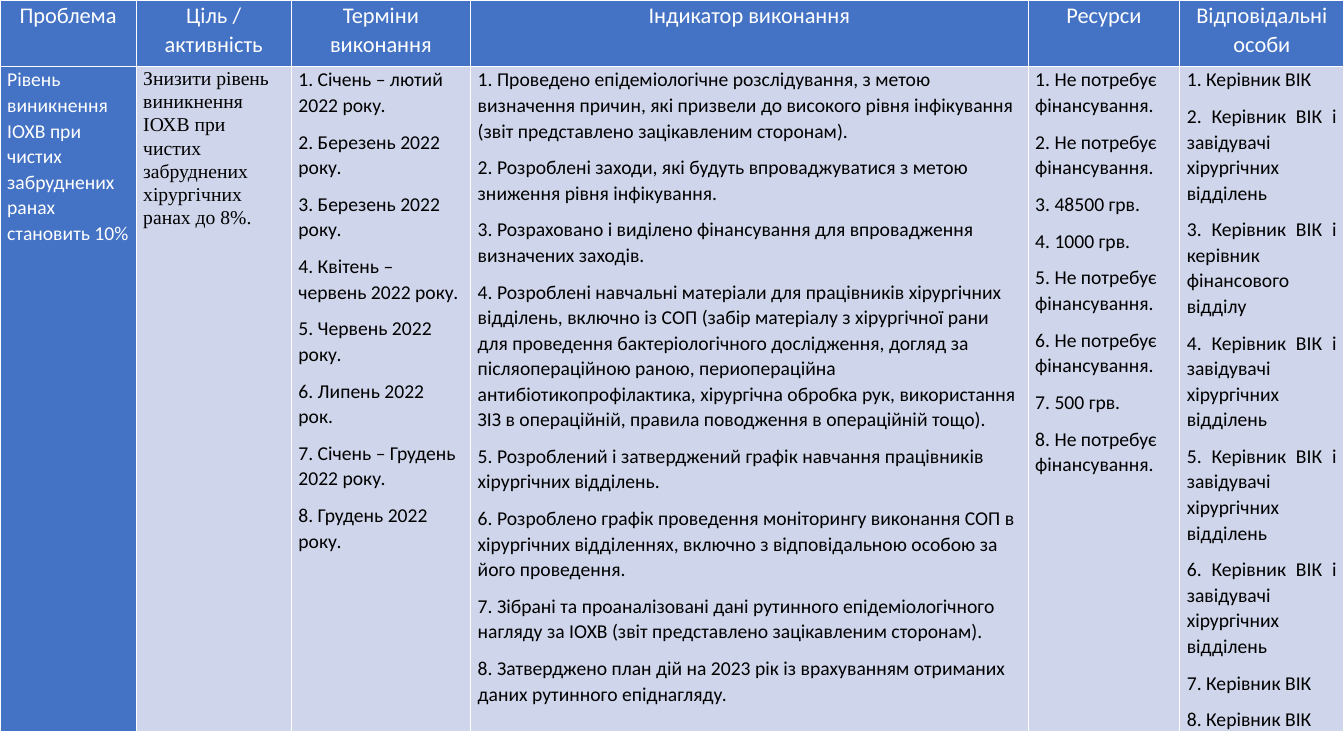
from lxml import etree
from pptx import Presentation
from pptx.dml.color import RGBColor
from pptx.enum.text import PP_ALIGN
from pptx.oxml.ns import qn
from pptx.util import Cm, Pt

LEFT, MID, FULL = PP_ALIGN.LEFT, PP_ALIGN.CENTER, PP_ALIGN.JUSTIFY
BLUE = RGBColor(0x44, 0x72, 0xC4)
PALE = RGBColor(0xCF, 0xD5, 0xEA)
WHITE = RGBColor(0xFF, 0xFF, 0xFF)
BLACK = RGBColor(0, 0, 0)
SANS, SERIF = "Calibri", "Times New Roman"

WIDTHS = [3.43, 3.91, 4.52, 14.05, 3.82, 4.14]
HEIGHTS = [1.68, 16.48]
HEADS = ["Проблема", "Ціль / активність", "Терміни виконання",
         "Індикатор виконання", "Ресурси", "Відповідальні особи"]
ISSUE = "Рівень виникнення ІОХВ при чистих забруднених ранах становить 10%"
GOAL = ("Знизити рівень виникнення ІОХВ при чистих забруднених "
        "хірургічних ранах до 8%.")
DATES = ["Січень – лютий 2022 року.", "Березень 2022 року.",
         "Березень 2022 року.", "Квітень – червень 2022 року.",
         "Червень 2022 року.", "Липень 2022 рок.",
         "Січень – Грудень 2022 року.", "Грудень 2022 року."]
SIGNS = [
    "Проведено епідеміологічне розслідування, з метою визначення причин, "
    "які призвели до високого рівня інфікування (звіт представлено "
    "зацікавленим сторонам).",
    "Розроблені заходи, які будуть впроваджуватися з метою зниження рівня "
    "інфікування.",
    "Розраховано і виділено фінансування для впровадження визначених заходів.",
    "Розроблені навчальні матеріали для працівників хірургічних відділень, "
    "включно із СОП (забір матеріалу з хірургічної рани для проведення "
    "бактеріологічного дослідження, догляд за післяопераційною раною, "
    "периопераційна антибіотикопрофілактика, хірургічна обробка рук, "
    "використання ЗІЗ в операційній, правила поводження в операційній тощо).",
    "Розроблений і затверджений графік навчання працівників хірургічних "
    "відділень.",
    "Розроблено графік проведення моніторингу виконання СОП в хірургічних "
    "відділеннях, включно з відповідальною особою за його проведення.",
    "Зібрані та проаналізовані дані рутинного епідеміологічного нагляду за "
    "ІОХВ (звіт представлено зацікавленим сторонам).",
    "Затверджено план дій на 2023 рік із врахуванням отриманих даних "
    "рутинного епіднагляду.",
]
FREE = "Не потребує фінансування."
COSTS = [FREE, FREE, "48500 грв.", "1000 грв.", FREE, FREE, "500 грв.", FREE]
CHIEF = "Керівник ВІК"
WARDS = f"{CHIEF} і завідувачі хірургічних відділень"
MONEY = f"{CHIEF} і керівник фінансового відділу"
STAFF = [CHIEF, WARDS, MONEY, WARDS, WARDS, WARDS, CHIEF, CHIEF]


def number(items):
    return [f"{n}. {item}" for n, item in enumerate(items, 1)]


def edge(cell):
    """Draw a thin white border on all four sides; call before the fill."""
    props = cell._tc.get_or_add_tcPr()
    for side in ("a:lnL", "a:lnR", "a:lnT", "a:lnB"):
        line = etree.SubElement(props, qn(side), w=str(Pt(1)))
        fill = etree.SubElement(line, qn("a:solidFill"))
        etree.SubElement(fill, qn("a:srgbClr"), val=str(WHITE))


def fill_cell(cell, lines, back, ink, size=14, face=SANS, align=LEFT):
    edge(cell)
    cell.fill.solid()
    cell.fill.fore_color.rgb = back
    cell.margin_left = cell.margin_right = Cm(0.18)
    cell.margin_top = cell.margin_bottom = 0
    cell.text = "\n".join(lines)
    for para in cell.text_frame.paragraphs:
        para.alignment = align
        para.line_spacing = 1.07
        para.space_after = Pt(8)
        font = para.font
        font.name, font.size, font.bold = face, Pt(size), False
        font.color.rgb = ink


def add_plan(slide):
    frame = slide.shapes.add_table(
        len(HEIGHTS), len(WIDTHS), 0, 0, Cm(sum(WIDTHS)), Cm(sum(HEIGHTS)))
    table = frame.table
    for col, width in zip(table.columns, WIDTHS):
        col.width = Cm(width)
    for row, height in zip(table.rows, HEIGHTS):
        row.height = Cm(height)

    for col, head in enumerate(HEADS):
        fill_cell(table.cell(0, col), [head], BLUE, WHITE, size=16, align=MID)
    fill_cell(table.cell(1, 0), [ISSUE], BLUE, WHITE)
    fill_cell(table.cell(1, 1), [GOAL], PALE, BLACK, face=SERIF)
    for col, items in enumerate([DATES, SIGNS, COSTS, STAFF], 2):
        align = FULL if items is STAFF else LEFT
        fill_cell(table.cell(1, col), number(items), PALE, BLACK, align=align)


def main():
    deck = Presentation()
    deck.slide_width, deck.slide_height = Cm(33.87), Cm(19.05)
    blank = deck.slide_layouts[6]
    add_plan(deck.slides.add_slide(blank))
    deck.save("out.pptx")


if __name__ == "__main__":
    main()
